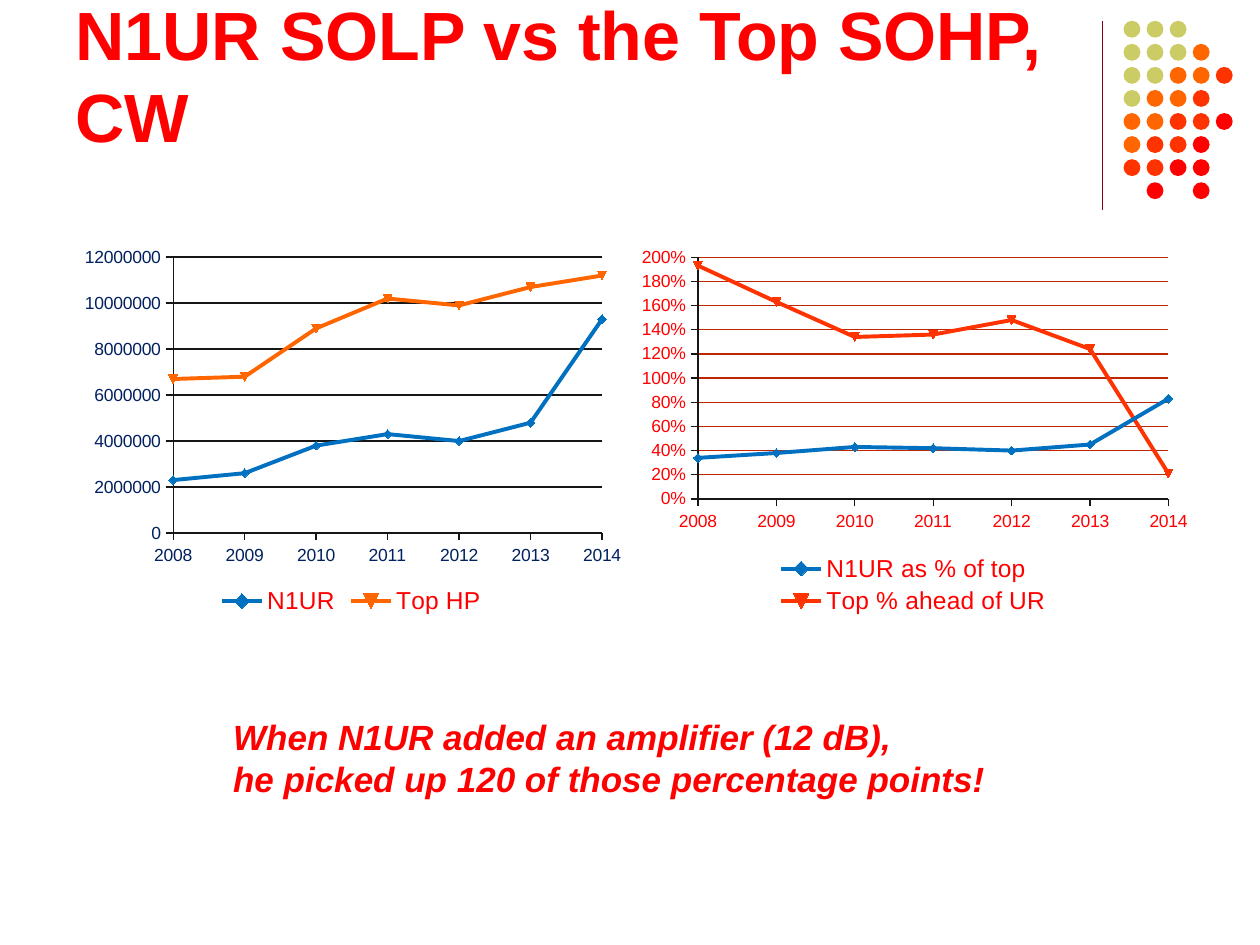
from lxml import etree
from pptx import Presentation
from pptx.chart.data import XyChartData
from pptx.dml.color import RGBColor
from pptx.enum import chart as ch, shapes, text
from pptx.oxml import parse_xml
from pptx.oxml.ns import nsdecls, qn
from pptx.util import Cm, Pt

RED = RGBColor(0xFF, 0x00, 0x00)
SCARLET = RGBColor(0xFF, 0x33, 0x00)
ORANGE = RGBColor(0xFF, 0x66, 0x00)
OLIVE = RGBColor(0xCC, 0xCC, 0x66)
MAROON = RGBColor(0x86, 0x00, 0x1A)
BLUE = RGBColor(0x00, 0x70, 0xC0)
NAVY = RGBColor(0x00, 0x20, 0x60)
BLACK = RGBColor(0x16, 0x16, 0x16)
BRICK = RGBColor(0xBD, 0x26, 0x00)
FONT = "Arial"
YEARS = range(2008, 2015)


def add_text(s, box, lines, size, italic, wrap, anchor):
    tf = s.shapes.add_textbox(*(Cm(v) for v in box)).text_frame
    tf.word_wrap = wrap
    tf.vertical_anchor = anchor
    for i, line in enumerate(lines):
        p = tf.paragraphs[0] if i == 0 else tf.add_paragraph()
        r = p.add_run()
        r.text = line
        r.font.name, r.font.size = FONT, Pt(size)
        r.font.bold, r.font.italic = True, italic
        r.font.color.rgb = RED


def add_scatter(s, box, series, label_color, grid_color, top, unit, fmt, plot_box):
    """Smooth scatter by year; plot_box is the inner plot as fractions of the chart."""
    data = XyChartData(number_format=fmt)
    for name, values, _ in series:
        points = data.add_series(name)
        for year, value in zip(YEARS, values):
            points.add_data_point(year, value)
    chart = s.shapes.add_chart(ch.XL_CHART_TYPE.XY_SCATTER_SMOOTH,
                               *(Cm(v) for v in box), data).chart
    chart.has_title = False
    chart.font.name, chart.font.size = FONT, Pt(10)
    chart.font.color.rgb = label_color

    chart.has_legend = True
    chart.legend.position = ch.XL_LEGEND_POSITION.BOTTOM
    chart.legend.include_in_layout = False
    chart.legend.font.name, chart.legend.font.size = FONT, Pt(14)
    chart.legend.font.color.rgb = RED

    x_axis, y_axis = chart.category_axis, chart.value_axis
    scales = ((x_axis, 2008, 2014, 1, "General"), (y_axis, 0, top, unit, fmt))
    for axis, low, high, step, number_format in scales:
        axis.minimum_scale, axis.maximum_scale, axis.major_unit = low, high, step
        axis.major_tick_mark = ch.XL_TICK_MARK.OUTSIDE
        axis.minor_tick_mark = ch.XL_TICK_MARK.NONE
        axis.format.line.color.rgb = BLACK
        axis.format.line.width = Pt(0.75)
        axis.tick_labels.number_format = number_format
        axis.tick_labels.number_format_is_linked = False
        axis.tick_labels.font.size = Pt(10)
        axis.tick_labels.font.color.rgb = label_color
    x_axis.has_major_gridlines = False
    y_axis.has_major_gridlines = True
    y_axis.major_gridlines.format.line.color.rgb = grid_color
    y_axis.major_gridlines.format.line.width = Pt(0.75)

    for ser, (_, _, color) in zip(chart.plots[0].series, series):
        ser.format.line.color.rgb = color
        ser.format.line.width = Pt(2.25)
        ser.marker.style = ch.XL_MARKER_STYLE.AUTOMATIC
        ser.marker.size = 5
        ser.marker.format.fill.solid()
        ser.marker.format.fill.fore_color.rgb = color
        ser.marker.format.line.color.rgb = color
    chart.plots[0].vary_by_categories = False

    plot_area = chart.plots[0]._element.getparent()
    for old in plot_area.findall(qn("c:layout")):
        plot_area.remove(old)
    sizes = "".join(f'<c:{k} val="{v}"/>' for k, v in zip("xywh", plot_box))
    plot_area.insert(0, parse_xml(
        f'<c:layout {nsdecls("c")}><c:manualLayout><c:layoutTarget val="inner"/>'
        f'<c:xMode val="edge"/><c:yMode val="edge"/>{sizes}'
        '</c:manualLayout></c:layout>'))


prs = Presentation()
prs.slide_width, prs.slide_height = Cm(25.4), Cm(19.05)
s = prs.slides.add_slide(prs.slide_layouts[6])

# Corner ornament: a rule and a grid of dots
rule = s.shapes.add_connector(shapes.MSO_CONNECTOR.STRAIGHT,
                              Cm(22.22), Cm(0.42), Cm(22.22), Cm(4.23))
rule.line.color.rgb = MAROON
rule.line.width = Pt(0.75)
etree.SubElement(rule._element.spPr, qn("a:effectLst"))

DOT_COLORS = {"y": OLIVE, "o": ORANGE, "s": SCARLET, "r": RED}
DOT_ROWS = ["yyy", "yyyo", "yyoos", "yoos", "oossr", "ossr", "ssrr", ".r.r"]
for row, keys in enumerate(DOT_ROWS):
    for col, key in enumerate(keys):
        if key not in DOT_COLORS:
            continue
        sp = s.shapes.add_shape(shapes.MSO_SHAPE.OVAL, Cm(22.65 + 0.465 * col),
                                Cm(0.42 + 0.465 * row), Cm(0.34), Cm(0.34))
        sp.shadow.inherit = False
        sp.fill.solid()
        sp.fill.fore_color.rgb = DOT_COLORS[key]
        sp.line.fill.background()

add_text(s, (1.27, 1.07, 20.75, 2.21), ["N1UR SOLP vs the Top SOHP, CW"],
         39, False, True, text.MSO_ANCHOR.BOTTOM)

scores = [
    ("N1UR", (2300000, 2600000, 3800000, 4300000, 4000000, 4800000, 9300000), BLUE),
    ("Top HP", (6700000, 6800000, 8900000, 10200000, 9900000, 10700000, 11200000), ORANGE),
]
add_scatter(s, (1.47, 4.88, 11.23, 7.62), scores, NAVY, BLACK,
            12000000, 2000000, "General", (0.18, 0.04, 0.77, 0.73))

shares = [
    ("N1UR as % of top", (0.34, 0.38, 0.43, 0.42, 0.40, 0.45, 0.83), BLUE),
    ("Top % ahead of UR", (1.93, 1.63, 1.34, 1.36, 1.48, 1.24, 0.21), SCARLET),
]
add_scatter(s, (12.7, 4.88, 11.43, 7.62), shares, RED, BRICK,
            2, 0.2, "0%", (0.12, 0.04, 0.83, 0.64))

add_text(s, (4.45, 14.3, 15.77, 1.96),
         ["When N1UR added an amplifier (12 dB),",
          "he picked up 120 of those percentage points!"],
         20, True, False, text.MSO_ANCHOR.TOP)

prs.save("out.pptx")
